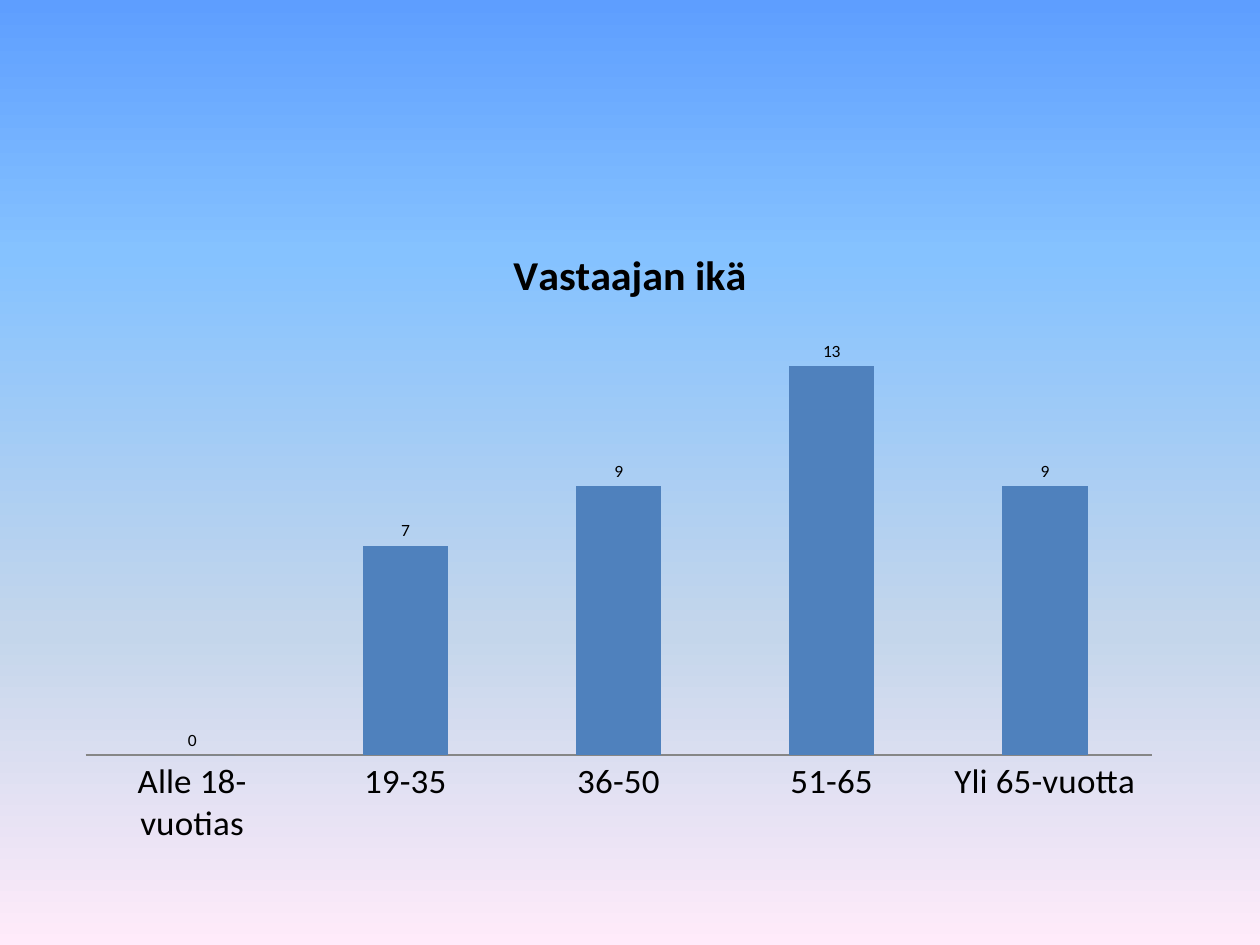
from lxml import etree
from pptx import Presentation
from pptx.chart.data import CategoryChartData
from pptx.dml.color import RGBColor
from pptx.enum.chart import XL_CHART_TYPE, XL_LABEL_POSITION, XL_TICK_MARK
from pptx.oxml.ns import qn
from pptx.util import Cm, Pt

COLUMN = XL_CHART_TYPE.COLUMN_CLUSTERED
OUTSIDE = XL_LABEL_POSITION.OUTSIDE_END
NO_TICK = XL_TICK_MARK.NONE

BLACK = RGBColor(0x00, 0x00, 0x00)
GREY = RGBColor(0x86, 0x86, 0x86)
BLUE = RGBColor(0x4F, 0x81, 0xBD)
SKY = [
    (0, RGBColor(0x5E, 0x9E, 0xFF)),
    (27, RGBColor(0x85, 0xC2, 0xFF)),
    (67, RGBColor(0xC4, 0xD6, 0xEB)),
    (100, RGBColor(0xFF, 0xEB, 0xFA)),
]

AGES = {
    "Alle 18-vuotias": 0,
    "19-35": 7,
    "36-50": 9,
    "51-65": 13,
    "Yli 65-vuotta": 9,
}


def style(font, size, bold=False, color=BLACK, name="Calibri"):
    font.size = Pt(size)
    font.bold = bold
    font.name = name
    font.color.rgb = color


def write(frame, text, **form):
    run = frame.paragraphs[0].add_run()
    run.text = text
    style(run.font, **form)


class Page:
    def __init__(self, slide, size=10, fill=BLUE):
        self.slide = slide
        self.size = size
        self.fill = fill

    def backdrop(self, stops):
        fill = self.slide.background.fill
        fill.gradient()
        fill.gradient_angle = 270
        ramp = self.slide.element.find(".//" + qn("a:gsLst"))
        for stop in list(ramp):
            ramp.remove(stop)
        for share, color in stops:
            stop = etree.SubElement(ramp, qn("a:gs"), pos=str(share * 1000))
            etree.SubElement(stop, qn("a:srgbClr"), val=str(color))

    def columns(self, title, data, box, plot):
        source = CategoryChartData()
        source.categories = list(data)
        source.add_series("Series 1", list(data.values()))
        chart = self.slide.shapes.add_chart(COLUMN, *box, source).chart
        style(chart.font, self.size)
        chart.has_legend = False
        chart.has_title = True
        write(chart.chart_title.text_frame, title, size=24, bold=True)
        chart.chart_title.include_in_layout = False
        self.axes(chart)
        self.bars(chart.plots[0])
        self.place(chart, plot)

    def axes(self, chart):
        base = chart.category_axis
        base.major_tick_mark = base.minor_tick_mark = NO_TICK
        base.format.line.color.rgb = GREY
        base.format.line.width = Pt(0.75)
        style(base.tick_labels.font, 20)
        scale = chart.value_axis
        scale.has_major_gridlines = False
        scale.minimum_scale = 0
        scale.visible = False

    def bars(self, group):
        group.gap_width = 150
        group.overlap = -25
        group.vary_by_categories = False
        fill = group.series[0].format.fill
        fill.solid()
        fill.fore_color.rgb = self.fill
        group.has_data_labels = True
        labels = group.data_labels
        labels.show_value = True
        labels.position = OUTSIDE
        style(labels.font, self.size)

    def place(self, chart, plot):
        area = chart.element.find(".//" + qn("c:plotArea"))
        layout = area.find(qn("c:layout"))
        if layout is None:
            layout = etree.Element(qn("c:layout"))
            area.insert(0, layout)
        manual = etree.SubElement(layout, qn("c:manualLayout"))
        parts = {"layoutTarget": "inner", "xMode": "edge", "yMode": "edge"}
        parts.update(zip("xywh", plot))
        for key, value in parts.items():
            etree.SubElement(manual, qn("c:" + key), val=str(value))


def main():
    deck = Presentation()
    deck.slide_width, deck.slide_height = Cm(25.4), Cm(19.05)
    page = Page(deck.slides.add_slide(deck.slide_layouts[6]))
    page.backdrop(SKY)
    box = Cm(1.27), Cm(4.45), Cm(22.86), Cm(12.57)
    page.columns("Vastaajan ikä", AGES, box, (0.02, 0.19, 0.94, 0.69))
    deck.save("out.pptx")


if __name__ == "__main__":
    main()
